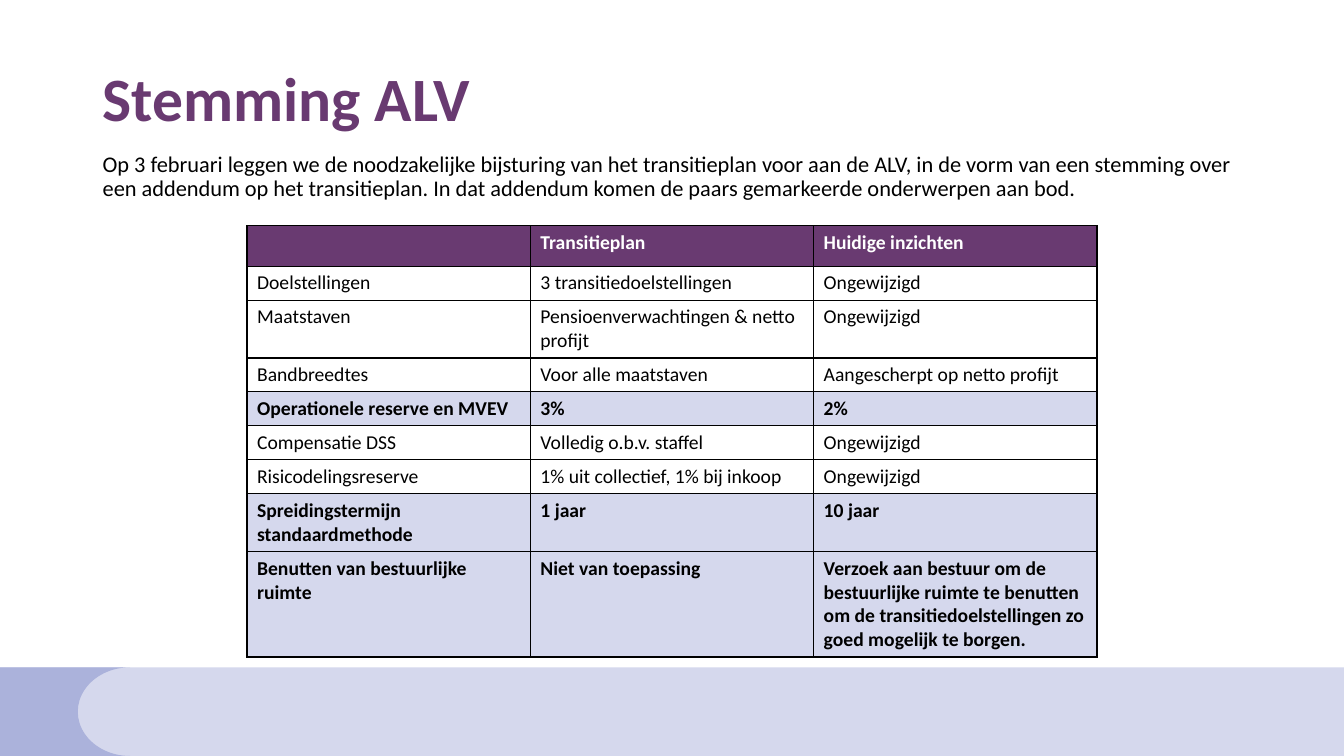
from lxml import etree
from pptx import Presentation
from pptx.dml.color import RGBColor
from pptx.enum.shapes import MSO_SHAPE as Preset
from pptx.enum.text import MSO_ANCHOR as Anchor, PP_ALIGN as Align
from pptx.oxml.ns import qn
from pptx.util import Inches, Pt

PURPLE = RGBColor(0x69, 0x3A, 0x71)
LAVENDER = RGBColor(0xAB, 0xB2, 0xDB)
PALE = RGBColor(0xD5, 0xD8, 0xED)
WHITE = RGBColor(0xFF, 0xFF, 0xFF)
BLACK = RGBColor(0, 0, 0)
FONT = "Calibri"

INTRO = (
    "Op 3 februari leggen we de noodzakelijke bijsturing van het transitieplan "
    "voor aan de ALV, in de vorm van een stemming over een addendum op het "
    "transitieplan. In dat addendum komen de paars gemarkeerde onderwerpen aan bod."
)
HEADER = ("", "Transitieplan", "Huidige inzichten")
TOPICS = [
    ("Doelstellingen", "3 transitiedoelstellingen", "Ongewijzigd"),
    ("Maatstaven", "Pensioenverwachtingen & netto profijt", "Ongewijzigd"),
    ("Bandbreedtes", "Voor alle maatstaven", "Aangescherpt op netto profijt"),
    ("Operationele reserve en MVEV", "3%", "2%"),
    ("Compensatie DSS", "Volledig o.b.v. staffel", "Ongewijzigd"),
    ("Risicodelingsreserve", "1% uit collectief, 1% bij inkoop", "Ongewijzigd"),
    ("Spreidingstermijn standaardmethode", "1 jaar", "10 jaar"),
    ("Benutten van bestuurlijke ruimte", "Niet van toepassing",
     "Verzoek aan bestuur om de bestuurlijke ruimte te benutten om de "
     "transitiedoelstellingen zo goed mogelijk te borgen."),
]
MARKED_ROWS = {4, 7, 8}
LINES_PER_ROW = (1, 1, 2, 1, 1, 1, 1, 2, 4)
LINE_HEIGHT = 0.237
CELL_PADDING = 0.1


def add_run(paragraph, text, size, color, bold=False):
    run = paragraph.add_run()
    run.text = text
    run.font.name = FONT
    run.font.size = Pt(size)
    run.font.bold = bold
    run.font.color.rgb = color


def add_text(slide, top, text, size, color, bold, anchor):
    box = slide.shapes.add_textbox(Inches(0.92), Inches(top), Inches(11.5), Inches(0.93))
    frame = box.text_frame
    frame.word_wrap = True
    frame.vertical_anchor = anchor
    paragraph = frame.paragraphs[0]
    paragraph.alignment = Align.LEFT
    paragraph.line_spacing = 0.9
    add_run(paragraph, text, size, color, bold)


def add_footer_shape(slide, preset, left, width, color):
    shape = slide.shapes.add_shape(
        preset, Inches(left), Inches(6.62), Inches(width), Inches(0.88))
    shape.shadow.inherit = False
    shape.fill.solid()
    shape.fill.fore_color.rgb = color
    shape.line.fill.background()


def add_borders(cell):
    properties = cell._tc.get_or_add_tcPr()
    for position, side in enumerate(("a:lnL", "a:lnR", "a:lnT", "a:lnB")):
        line = etree.Element(qn(side), w=str(Pt(1)))
        fill = etree.SubElement(line, qn("a:solidFill"))
        etree.SubElement(fill, qn("a:srgbClr"), val=str(BLACK))
        properties.insert(position, line)


def fill_cell(cell, text, background, color, bold):
    cell.fill.solid()
    cell.fill.fore_color.rgb = background
    add_borders(cell)
    add_run(cell.text_frame.paragraphs[0], text, 14, color, bold)


def row_style(index):
    if index == 0:
        return PURPLE, WHITE, True
    if index in MARKED_ROWS:
        return PALE, BLACK, True
    return WHITE, BLACK, False


def add_topics_table(slide):
    rows = [HEADER, *TOPICS]
    heights = [lines * LINE_HEIGHT + CELL_PADDING for lines in LINES_PER_ROW]
    table = slide.shapes.add_table(
        len(rows), len(HEADER), Inches(2.45), Inches(2.24),
        Inches(8.43), Inches(sum(heights))).table
    for column in table.columns:
        column.width = Inches(2.81)
    for index, (texts, height) in enumerate(zip(rows, heights)):
        table.rows[index].height = Inches(height)
        for column_index, text in enumerate(texts):
            fill_cell(table.cell(index, column_index), text, *row_style(index))


def main():
    presentation = Presentation()
    presentation.slide_width = Inches(13.33)
    presentation.slide_height = Inches(7.5)
    slide = presentation.slides.add_slide(presentation.slide_layouts[6])
    add_footer_shape(slide, Preset.RECTANGLE, 0, 13.33, PALE)
    add_footer_shape(slide, Preset.FLOWCHART_STORED_DATA, -1.82, 3.11, LAVENDER)
    add_text(slide, 0.54, "Stemming ALV", 44, PURPLE, True, Anchor.MIDDLE)
    add_text(slide, 1.47, INTRO, 16, BLACK, False, Anchor.TOP)
    add_topics_table(slide)
    presentation.save("out.pptx")


if __name__ == "__main__":
    main()
